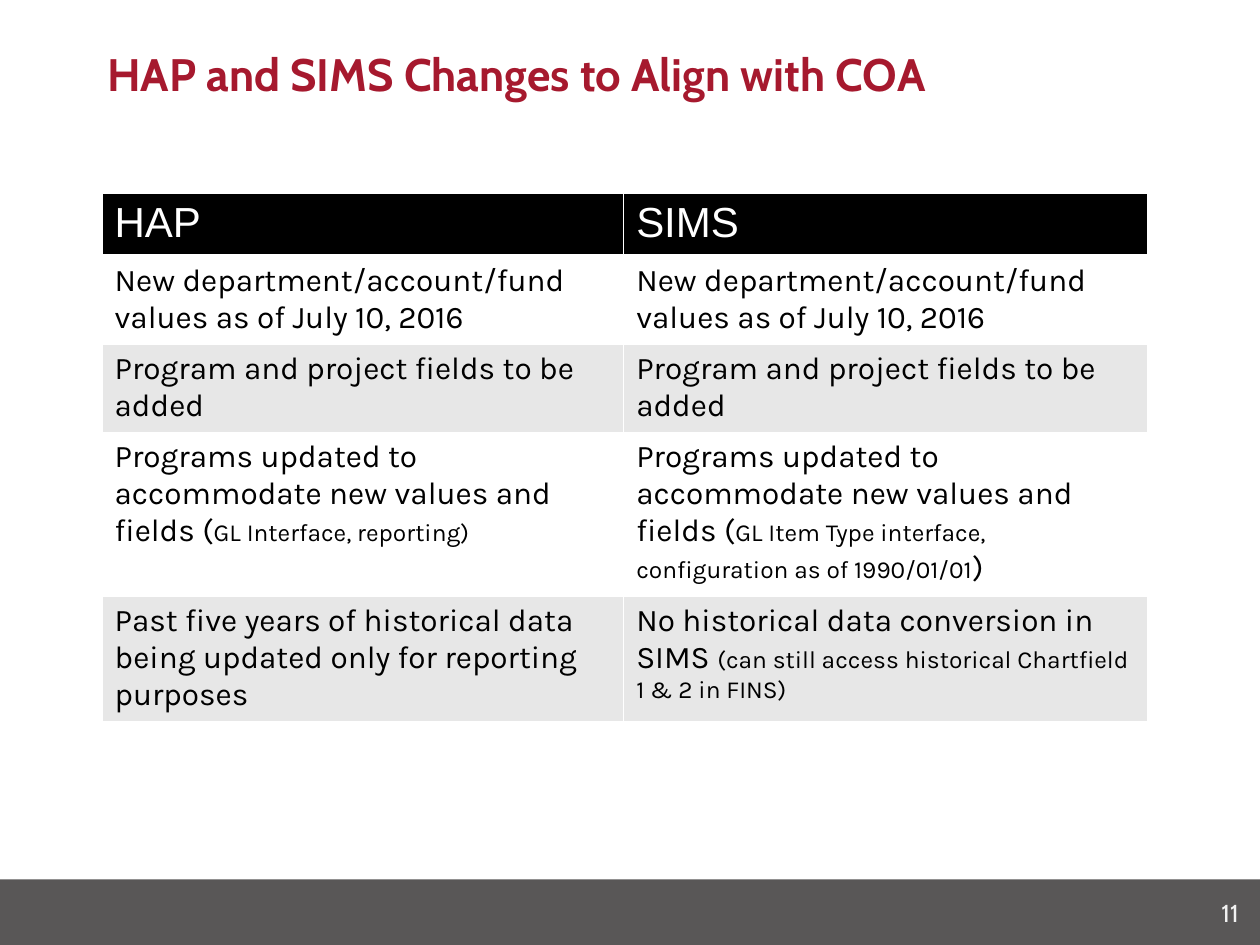
from lxml import etree
from pptx import Presentation
from pptx.dml.color import RGBColor
from pptx.enum.shapes import MSO_SHAPE
from pptx.enum.text import MSO_ANCHOR, PP_ALIGN
from pptx.oxml.ns import qn
from pptx.util import Inches, Pt

RECTANGLE = MSO_SHAPE.RECTANGLE
MIDDLE = MSO_ANCHOR.MIDDLE
LEFT, RIGHT = PP_ALIGN.LEFT, PP_ALIGN.RIGHT

CRIMSON = RGBColor(0xA6, 0x19, 0x2E)
FOOTER_GRAY = RGBColor(0x59, 0x57, 0x57)
NUMBER_GRAY = RGBColor(0xF2, 0xF2, 0xF2)
BAND_GRAY = RGBColor(0xE7, 0xE7, 0xE7)
BLACK = RGBColor(0, 0, 0)
WHITE = RGBColor(0xFF, 0xFF, 0xFF)

TITLE_ONLY = 5
BODY_SIZE, DETAIL_SIZE = 18, 14
COLUMN_WIDTHS = (4.14, 4.16)
ROW_HEIGHTS = (0.46, 0.7, 0.68, 1.29, 0.97)

# Each cell lists its runs; every second run is a detail in smaller type.
DEPARTMENT = ["New department/account/fund values as of July 10, 2016"]
PROGRAM = ["Program and project fields to be added"]
UPDATED = "Programs updated to accommodate new values and fields ("
ROWS = [
    (["HAP"], ["SIMS"]),
    (DEPARTMENT, DEPARTMENT),
    (PROGRAM, PROGRAM),
    ([UPDATED, "GL Interface, reporting)"],
     [UPDATED, "GL Item Type interface, configuration as of 1990/01/01", ")"]),
    (["Past five years of historical data being updated only for reporting purposes"],
     ["No historical data conversion in SIMS ",
      "(can still access historical Chartfield 1 & 2 in FINS)"]),
]


def set_font(font, name, size, color, bold=False):
    font.name = name
    font.size = Pt(size)
    font.color.rgb = color
    font.bold = bold


def add_title(slide, text):
    title = slide.shapes.title
    title.left, title.top = Inches(0.75), Inches(0.21)
    title.width, title.height = Inches(8.5), Inches(0.75)
    title.text_frame.text = text
    title.text_frame.vertical_anchor = MIDDLE
    paragraph = title.text_frame.paragraphs[0]
    paragraph.alignment = LEFT
    set_font(paragraph.font, "Cabin", 26, CRIMSON, bold=True)


def add_footer(slide, number):
    bar = slide.shapes.add_shape(RECTANGLE, 0, Inches(6.98), Inches(10), Inches(0.52))
    bar.shadow.inherit = False
    bar.fill.solid()
    bar.fill.fore_color.rgb = FOOTER_GRAY
    bar.line.fill.background()

    box = slide.shapes.add_textbox(Inches(9.32), Inches(7.08), Inches(0.61), Inches(0.4))
    box.text_frame.word_wrap = True
    paragraph = box.text_frame.paragraphs[0]
    paragraph.text = number
    paragraph.alignment = RIGHT
    set_font(paragraph.font, "Cabin", 14, NUMBER_GRAY)


def add_borders(cell, bottom_width):
    """Draw white borders; they must come before the fill in the cell properties."""
    properties = cell._tc.get_or_add_tcPr()
    widths = {"a:lnL": 1, "a:lnR": 1, "a:lnT": 1, "a:lnB": bottom_width}
    for position, (tag, width) in enumerate(widths.items()):
        line = etree.Element(qn(tag), w=str(Pt(width)))
        fill = etree.SubElement(line, qn("a:solidFill"))
        etree.SubElement(fill, qn("a:srgbClr"), val=str(WHITE))
        properties.insert(position, line)


def fill_cell(cell, runs, is_header, color):
    cell.fill.solid()
    cell.fill.fore_color.rgb = color
    add_borders(cell, 3 if is_header else 1)
    paragraph = cell.text_frame.paragraphs[0]
    if is_header:
        set_font(paragraph.font, "Arial", 24, WHITE)
    else:
        set_font(paragraph.font, "Karla", BODY_SIZE, BLACK)
    for index, text in enumerate(runs):
        run = paragraph.add_run()
        run.text = text
        if index % 2:
            run.font.size = Pt(DETAIL_SIZE)


def add_comparison_table(slide):
    frame = slide.shapes.add_table(
        len(ROWS), len(COLUMN_WIDTHS), Inches(0.81), Inches(1.53),
        Inches(sum(COLUMN_WIDTHS)), Inches(sum(ROW_HEIGHTS)))
    table = frame.table
    for column, width in zip(table.columns, COLUMN_WIDTHS):
        column.width = Inches(width)
    for index, (row, height, contents) in enumerate(zip(table.rows, ROW_HEIGHTS, ROWS)):
        row.height = Inches(height)
        is_header = index == 0
        color = BLACK if is_header else (WHITE if index % 2 else BAND_GRAY)
        for cell, runs in zip(row.cells, contents):
            fill_cell(cell, runs, is_header, color)


def main():
    presentation = Presentation()
    presentation.slide_width, presentation.slide_height = Inches(10), Inches(7.5)
    slide = presentation.slides.add_slide(presentation.slide_layouts[TITLE_ONLY])
    add_title(slide, "HAP and SIMS Changes to Align with COA")
    add_footer(slide, "11")
    add_comparison_table(slide)
    presentation.save("out.pptx")


if __name__ == "__main__":
    main()
